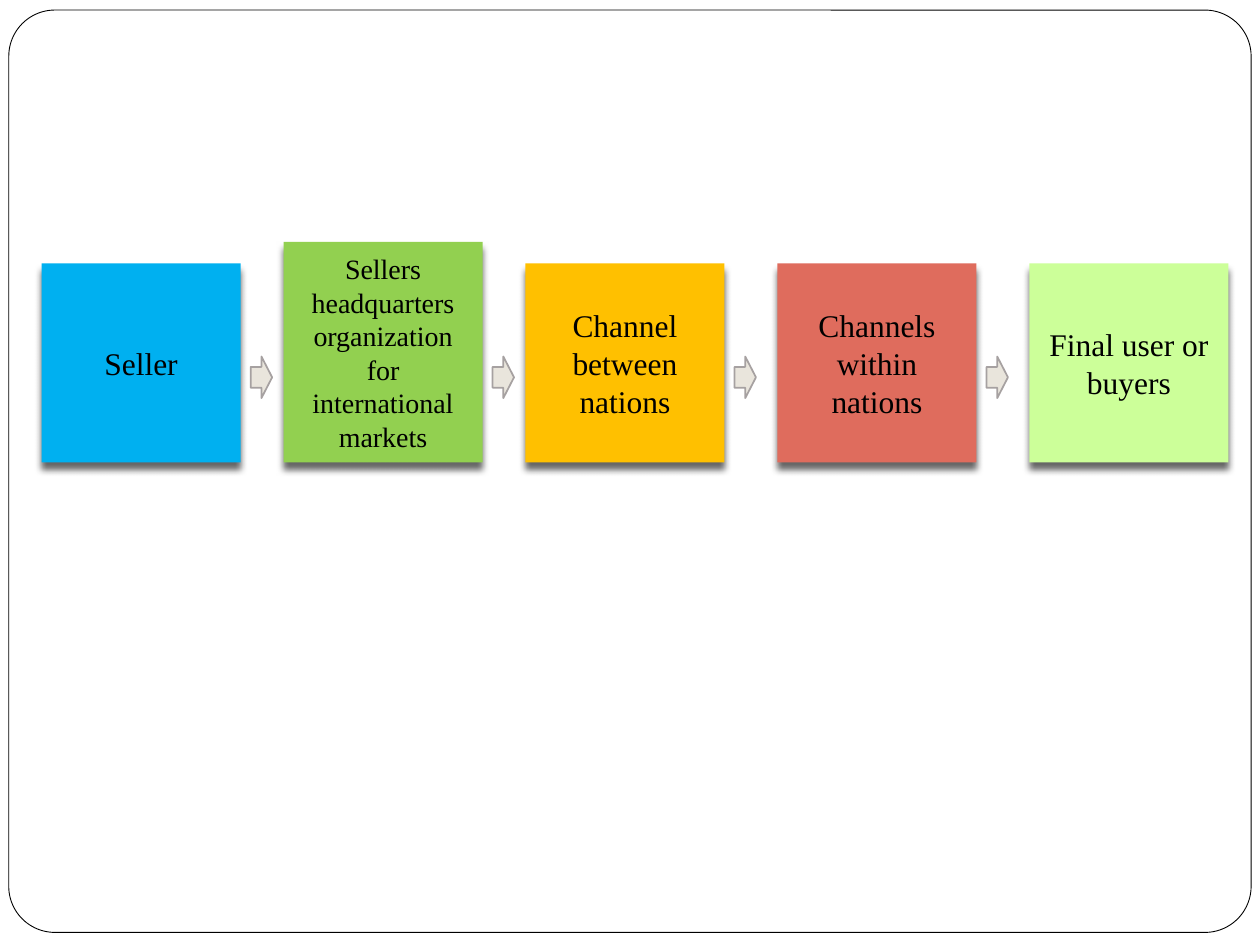
"""Build a slide showing the flow of an international distribution channel."""
import pptx
import pptx.dml.color
import pptx.enum.shapes
import pptx.enum.text
import pptx.oxml
import pptx.oxml.ns
import pptx.util
from pptx.util import Inches

RGBColor = pptx.dml.color.RGBColor
SHAPES = pptx.enum.shapes.MSO_SHAPE

BLACK = RGBColor(0x00, 0x00, 0x00)
WHITE = RGBColor(0xFF, 0xFF, 0xFF)
BLUE = RGBColor(0x00, 0xB0, 0xF0)
GREEN = RGBColor(0x92, 0xD0, 0x50)
AMBER = RGBColor(0xFF, 0xC0, 0x00)
RED = RGBColor(0xDF, 0x6C, 0x5D)
LIME = RGBColor(0xCC, 0xFF, 0x99)
ARROW_FILL = RGBColor(0xE9, 0xE5, 0xDC)
ARROW_LINE = RGBColor(0xA6, 0xA1, 0xA1)

STAGES = [
    ("Seller", BLUE, 0.33, 1.58, 18),
    ("Sellers headquarters organization for international markets", GREEN, 2.25, 1.75, 16),
    ("Channel between nations", AMBER, 4.17, 1.58, 18),
    ("Channels within nations", RED, 6.17, 1.58, 18),
    ("Final user or buyers", LIME, 8.17, 1.58, 18),
]
STAGE_WIDTH = 1.58
STAGE_BOTTOM = 3.67
ARROW_GAP = 0.08
ARROW_BOX = (2.83, 0.17, 0.33)

SHADOW = (
    f'<a:outerShdw {pptx.oxml.ns.nsdecls("a")} blurRad="50800" dist="50800" dir="5400000" '
    'rotWithShape="0"><a:srgbClr val="000000"><a:alpha val="60000"/></a:srgbClr></a:outerShdw>'
)


def add_block(slide, kind, box, fill, line=None, width=0):
    shape = slide.shapes.add_shape(kind, *map(Inches, box))
    shape.shadow.inherit = False
    shape.fill.solid()
    shape.fill.fore_color.rgb = fill
    if line is None:
        shape.line.fill.background()
    else:
        shape.line.color.rgb = line
        shape.line.width = pptx.util.Pt(width)
    return shape


def add_stage(slide, text, fill, left, height, size):
    box = (left, STAGE_BOTTOM - height, STAGE_WIDTH, height)
    shape = add_block(slide, SHAPES.RECTANGLE, box, fill)
    effects = shape._element.spPr.find(pptx.oxml.ns.qn("a:effectLst"))
    effects.append(pptx.oxml.parse_xml(SHADOW))
    frame = shape.text_frame
    frame.word_wrap = True
    frame.vertical_anchor = pptx.enum.text.MSO_ANCHOR.MIDDLE
    paragraph = frame.paragraphs[0]
    paragraph.alignment = pptx.enum.text.PP_ALIGN.CENTER
    run = paragraph.add_run()
    run.text = text
    run.font.color.rgb = BLACK
    for name, value in {"name": "Times New Roman", "size": pptx.util.Pt(size)}.items():
        setattr(run.font, name, value)


def main():
    presentation = pptx.Presentation()
    for name, value in {"slide_width": Inches(10), "slide_height": Inches(7.5)}.items():
        setattr(presentation, name, value)
    slide = presentation.slides.add_slide(presentation.slide_layouts[6])
    frame = add_block(slide, SHAPES.ROUNDED_RECTANGLE, (0.07, 0.08, 9.86, 7.32), WHITE, BLACK, 0.5)
    frame.adjustments[0] = 0.05
    for stage in STAGES:
        add_stage(slide, *stage)
    top, width, height = ARROW_BOX
    for _, _, left, _, _ in STAGES[:-1]:
        box = (left + STAGE_WIDTH + ARROW_GAP, top, width, height)
        add_block(slide, SHAPES.RIGHT_ARROW, box, ARROW_FILL, ARROW_LINE, 1)
    presentation.save("out.pptx")


if __name__ == "__main__":
    main()
